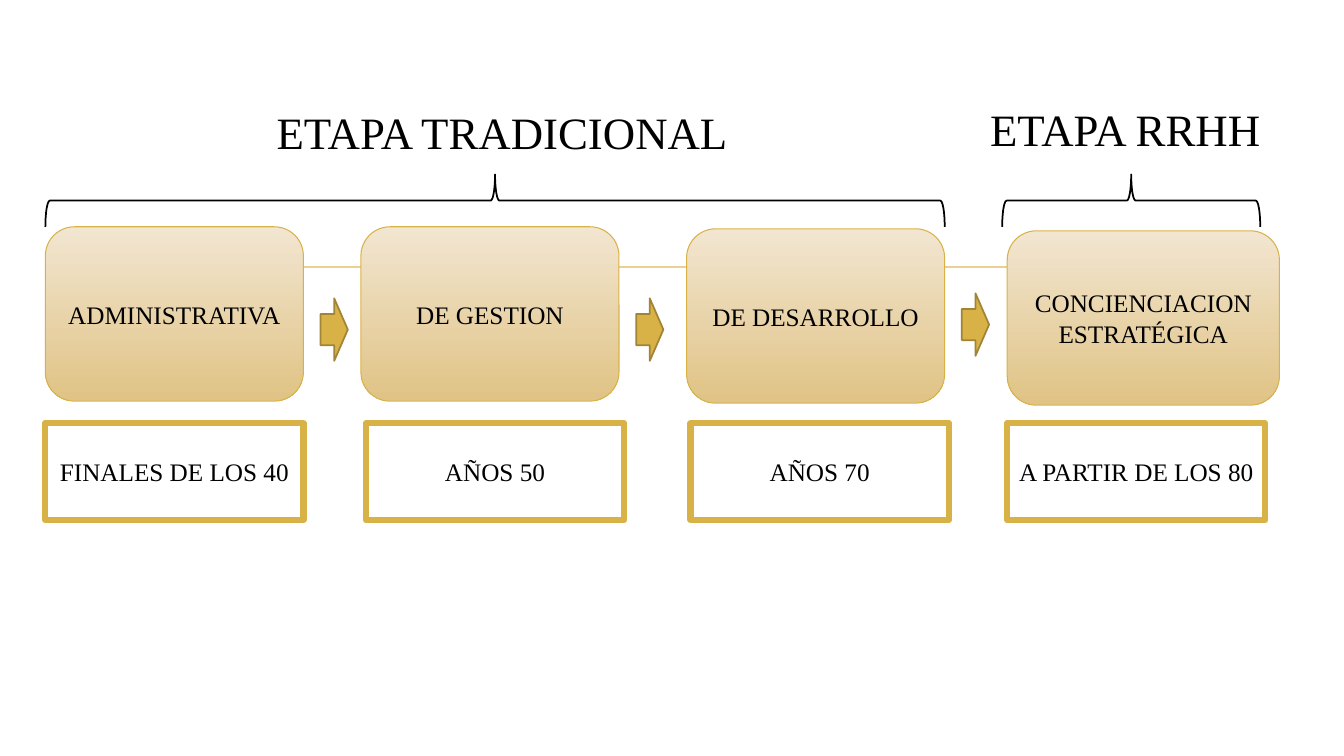
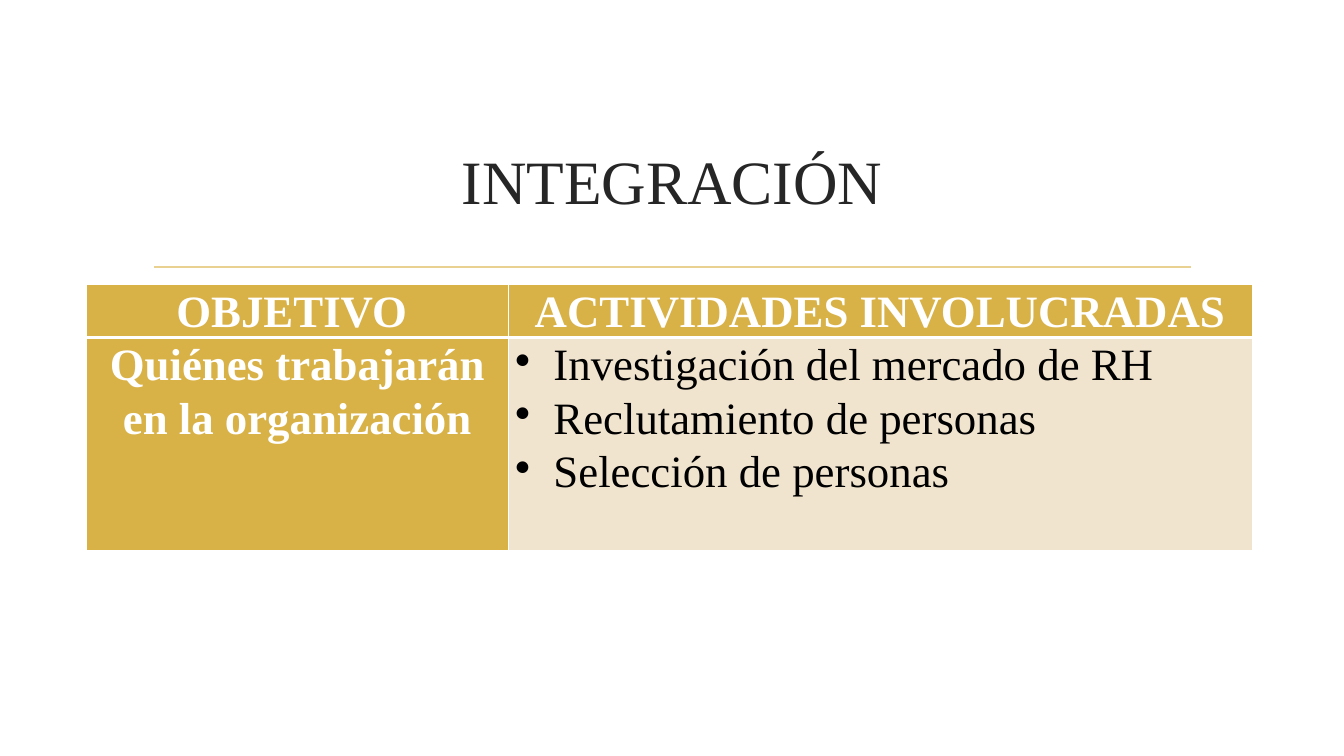
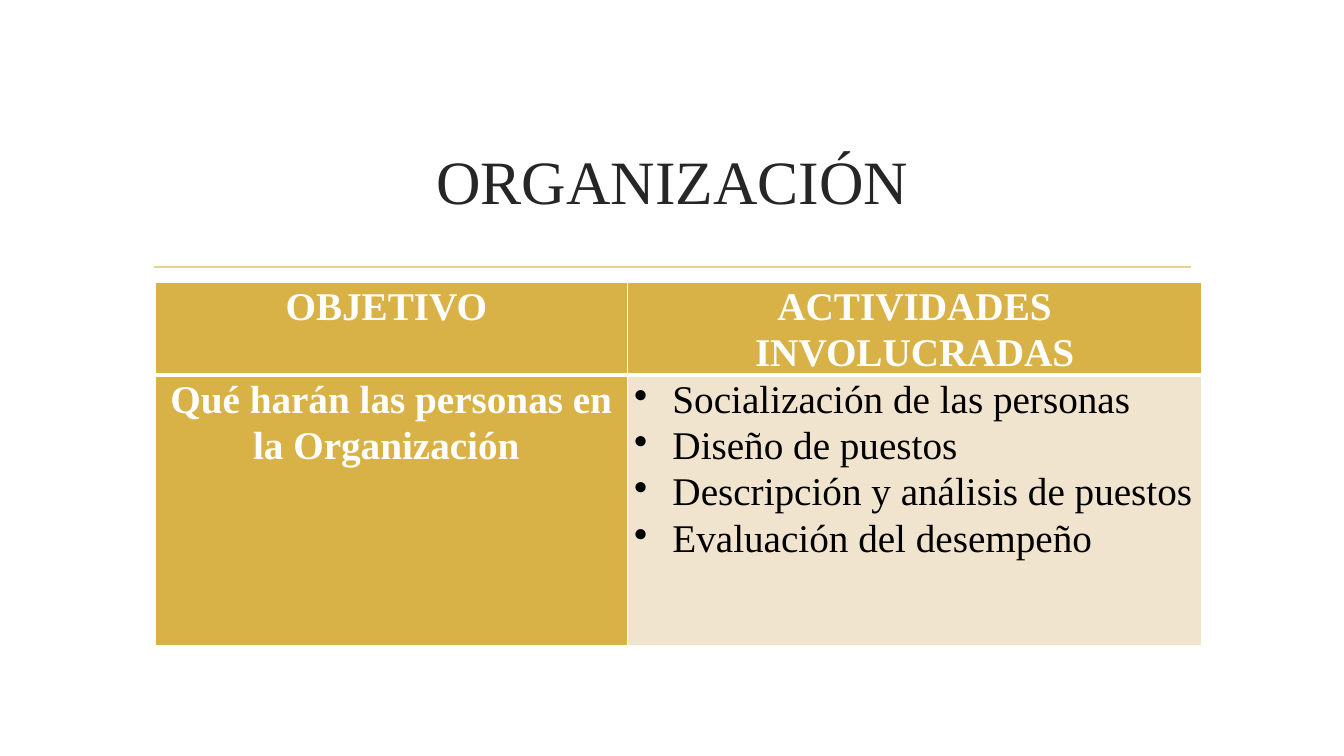
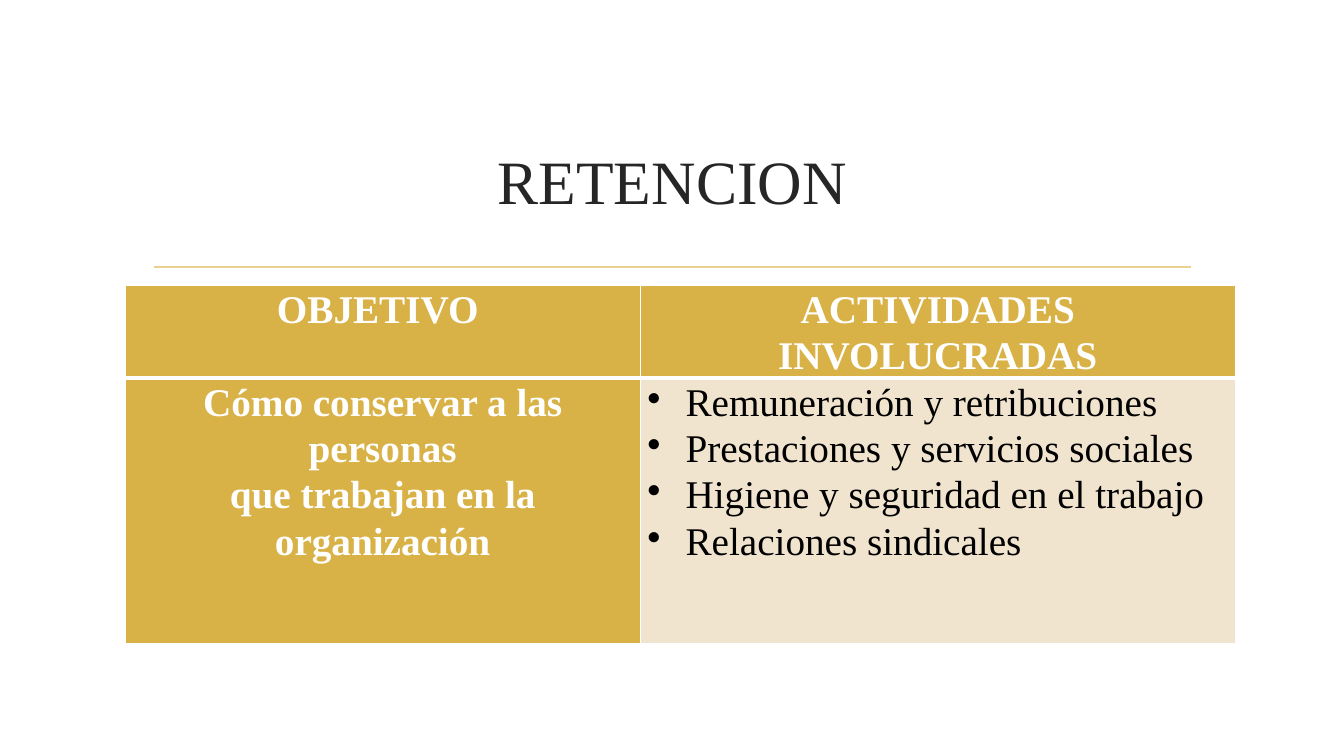
from lxml import etree
from pptx import Presentation
from pptx.dml.color import RGBColor
from pptx.enum.shapes import MSO_CONNECTOR, MSO_SHAPE
from pptx.enum.text import MSO_ANCHOR, PP_ALIGN
from pptx.oxml.ns import qn
from pptx.util import Inches, Pt

# Shared look
FONT = "Times New Roman"
BLACK = RGBColor(0x00, 0x00, 0x00)
WHITE = RGBColor(0xFF, 0xFF, 0xFF)
INK = RGBColor(0x26, 0x26, 0x26)
GOLD = RGBColor(0xD9, 0xB2, 0x47)
DARK_GOLD = RGBColor(0xA1, 0x84, 0x35)
RULE_GOLD = RGBColor(0xE8, 0xD1, 0x91)
CREAM = RGBColor(0xF1, 0xE4, 0xCF)
CARD_TOP = RGBColor(0xF2, 0xE6, 0xD1)
CARD_BOTTOM = RGBColor(0xE0, 0xC3, 0x85)

CENTER, LEFT = PP_ALIGN.CENTER, PP_ALIGN.LEFT
MIDDLE = MSO_ANCHOR.MIDDLE
RECTANGLE, ROUNDED = MSO_SHAPE.RECTANGLE, MSO_SHAPE.ROUNDED_RECTANGLE
ARROW, BRACE = MSO_SHAPE.RIGHT_ARROW, MSO_SHAPE.RIGHT_BRACE
STRAIGHT = MSO_CONNECTOR.STRAIGHT
TITLE_ONLY, BLANK = 5, 6

# Timeline content: name, date, card left, card top, card width, date left
STAGES = [
    ("ADMINISTRATIVA", "FINALES DE LOS 40", 0.45, 2.25, 2.56, 0.45),
    ("DE GESTION", "AÑOS 50", 3.58, 2.25, 2.56, 3.63),
    ("DE DESARROLLO", "AÑOS 70", 6.81, 2.27, 2.56, 6.85),
    ("CONCIENCIACION ESTRATÉGICA", "A PARTIR DE LOS 80", 9.99, 2.29, 2.7, 9.99),
]
ARROW_TOPS = [2.96, 2.96, 2.91]
# Heading, its left, top and width, then brace left and width
ERAS = [
    ("ETAPA TRADICIONAL", 0.75, 1.04, 8.24, 0.45, 8.92),
    ("ETAPA RRHH", 8.77, 1.01, 4.56, 9.94, 2.56),
]
CARD_HEIGHT, DATE_TOP, DATE_WIDTH, DATE_HEIGHT = 1.73, 4.2, 2.56, 0.96
ARROW_GAP, ARROW_WIDTH, ARROW_HEIGHT = 0.17, 0.27, 0.62
BRACE_TOP, BRACE_DEPTH = 1.73, 0.52

# Table content
HEADERS = ["OBJETIVO ", "ACTIVIDADES INVOLUCRADAS"]
TABLES = [
    dict(title="INTEGRACIÓN", left=0.86, top=2.82, columns=[4.18, 7.38],
         rows=[0.52, 2.11], size=32,
         goal=["Quiénes trabajarán en la organización"],
         tasks=["Investigación del mercado de RH", "Reclutamiento de personas",
                "Selección de personas"]),
    dict(title="ORGANIZACIÓN", left=1.54, top=2.8, columns=[4.68, 5.7],
         rows=[0.91, 2.68], size=28,
         goal=["Qué harán las personas en la Organización "],
         tasks=["Socialización de las personas", "Diseño de puestos",
                "Descripción y análisis de puestos", "Evaluación del desempeño"]),
    dict(title="RETENCION", left=1.24, top=2.83, columns=[5.11, 5.9],
         rows=[0.91, 2.63], size=28,
         goal=["Cómo conservar a las personas", "que trabajan en la organización"],
         tasks=["Remuneración y retribuciones", "Prestaciones y servicios sociales",
                "Higiene y seguridad en el trabajo", "Relaciones sindicales"]),
]


def write(frame, lines, size, color=BLACK, bold=False, align=CENTER,
          spacing=None, bullet=False):
    """Fill a text frame, one paragraph for each line."""
    frame.word_wrap = True
    for index, line in enumerate(lines):
        para = frame.add_paragraph() if index else frame.paragraphs[0]
        if bullet:
            props = para._p.get_or_add_pPr()
            props.set("marL", str(Inches(0.38)))
            props.set("indent", str(-Inches(0.38)))
            etree.SubElement(props, qn("a:buChar")).set("char", "•")
        para.alignment = align
        if spacing:
            para.line_spacing = spacing
        span = para.add_run()
        span.text = line
        span.font.name, span.font.size = FONT, Pt(size)
        span.font.bold, span.font.color.rgb = bold, color


def add_box(page, kind, left, top, width, height, fill=None, line=BLACK, weight=1.25):
    box = page.shapes.add_shape(kind, Inches(left), Inches(top),
                                Inches(width), Inches(height))
    box.shadow.inherit = False
    if fill:
        box.fill.solid()
        box.fill.fore_color.rgb = fill
    else:
        box.fill.background()
    box.line.color.rgb, box.line.width = line, Pt(weight)
    box.text_frame.vertical_anchor = MIDDLE
    return box


def add_page(deck, layout):
    """Add a page with the gold rule that all pages share."""
    page = deck.slides.add_slide(deck.slide_layouts[layout])
    rule = page.shapes.add_connector(STRAIGHT, Inches(1.53), Inches(2.65),
                                     Inches(11.81), Inches(2.65))
    rule.line.color.rgb, rule.line.width = RULE_GOLD, Pt(1.25)
    etree.SubElement(rule._element.spPr, qn("a:effectLst"))
    return page


def add_timeline(deck):
    page = add_page(deck, BLANK)
    # Stage cards and their dates
    for name, date, left, top, width, date_left in STAGES:
        card = add_box(page, ROUNDED, left, top, width, CARD_HEIGHT,
                       line=GOLD, weight=0.75)
        card.fill.gradient()
        card.fill.gradient_angle = 270
        for stop, color in zip(card.fill.gradient_stops, (CARD_TOP, CARD_BOTTOM)):
            stop.color.rgb = color
        write(card.text_frame, [name], 18)
        label = add_box(page, RECTANGLE, date_left, DATE_TOP, DATE_WIDTH, DATE_HEIGHT,
                        fill=WHITE, line=GOLD, weight=4.5)
        write(label.text_frame, [date], 18)
    # Arrows after every card but the last
    for (_, _, left, _, width, _), top in zip(STAGES, ARROW_TOPS):
        add_box(page, ARROW, left + width + ARROW_GAP, top, ARROW_WIDTH, ARROW_HEIGHT,
                fill=GOLD, line=DARK_GOLD)
    # Era headings, each over a brace turned to point up
    for text, left, top, width, brace_left, brace_width in ERAS:
        heading = add_box(page, RECTANGLE, left, top, width, 0.54, fill=WHITE, line=WHITE)
        heading.text_frame.margin_left = Inches(0.32)
        write(heading.text_frame, [text], 32)
        shift = (brace_width - BRACE_DEPTH) / 2
        brace = add_box(page, BRACE, brace_left + shift, BRACE_TOP - shift,
                        BRACE_DEPTH, brace_width)
        brace.rotation = 270


def format_cell(cell, fill, top, bottom):
    """Set insets, white borders (points) and fill."""
    cell.margin_left = cell.margin_right = Inches(0.07)
    cell.margin_top = cell.margin_bottom = 0
    props = cell._tc.get_or_add_tcPr()
    for side, weight in (("L", 1), ("R", 1), ("T", top), ("B", bottom)):
        border = etree.SubElement(props, qn("a:ln" + side), w=str(Pt(weight)))
        solid = etree.SubElement(border, qn("a:solidFill"))
        etree.SubElement(solid, qn("a:srgbClr"), val=str(WHITE))
    cell.fill.solid()
    cell.fill.fore_color.rgb = fill


def add_table_page(deck, title, left, top, columns, rows, size, goal, tasks):
    page = add_page(deck, TITLE_ONLY)
    heading = page.shapes.title
    heading.left, heading.top = Inches(1.42), Inches(1.07)
    heading.width, heading.height = Inches(10.5), Inches(1.43)
    heading.text_frame.vertical_anchor = MIDDLE
    write(heading.text_frame, [title], 44, color=INK)

    table = page.shapes.add_table(2, 2, Inches(left), Inches(top),
                                  Inches(sum(columns)), Inches(sum(rows))).table
    table.horz_banding = False
    for column, width in zip(table.columns, columns):
        column.width = Inches(width)
    for row, height in zip(table.rows, rows):
        row.height = Inches(height)
    grid = [[[text] for text in HEADERS], [goal, tasks]]
    for r, row in enumerate(grid):
        for c, lines in enumerate(row):
            listed = r == 1 and c == 1
            cell = table.cell(r, c)
            format_cell(cell, CREAM if listed else GOLD,
                        top=3 if r else 1, bottom=1 if r else 3)
            write(cell.text_frame, lines, size, color=BLACK if listed else WHITE,
                  bold=not listed, align=LEFT if listed else CENTER,
                  spacing=1.07, bullet=listed)


def main():
    deck = Presentation()
    deck.slide_width, deck.slide_height = Inches(13.33), Inches(7.5)
    add_timeline(deck)
    for content in TABLES:
        add_table_page(deck, **content)
    deck.save("out.pptx")


if __name__ == "__main__":
    main()
